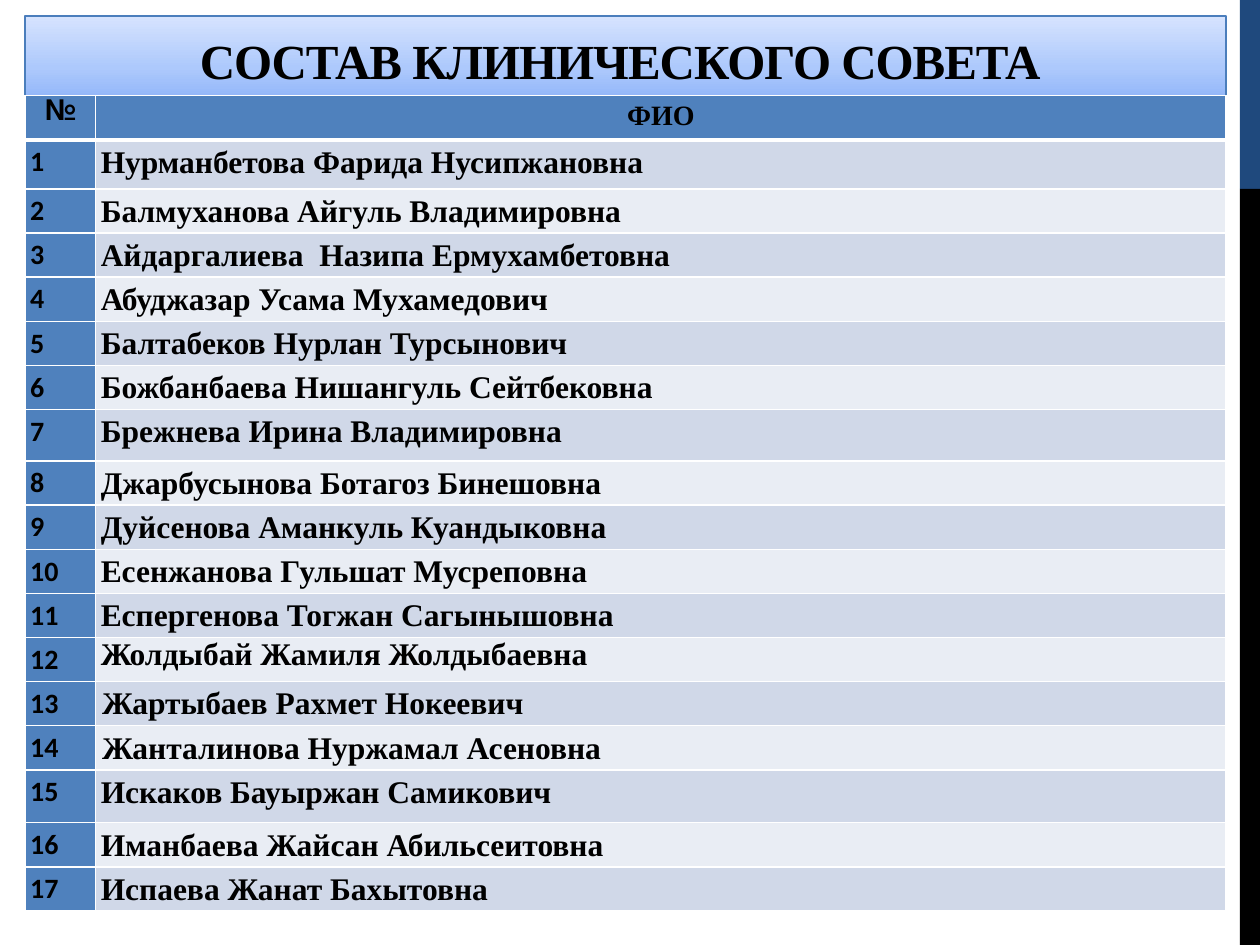
from copy import deepcopy

from lxml import etree
from pptx import Presentation
from pptx.dml.color import RGBColor
from pptx.enum.shapes import MSO_SHAPE
from pptx.enum.text import MSO_ANCHOR, PP_ALIGN
from pptx.oxml.ns import qn
from pptx.util import Inches, Pt

RECTANGLE = MSO_SHAPE.RECTANGLE
TOP, BOTTOM = MSO_ANCHOR.TOP, MSO_ANCHOR.BOTTOM
LEFT, CENTER = PP_ALIGN.LEFT, PP_ALIGN.CENTER

SERIF, SANS, HEADER_SANS = "Times New Roman", "Calibri", "TeX Gyre Adventor"
BLUE, NAVY, BLACK, WHITE = "4F81BD", "1F497D", "000000", "FFFFFF"
BANDS = ("D0D8E8", "E9EDF4")
TITLE_STOPS = ((0, "95B8F9"), (0.35, "ADC9FC"), (1, "D6E3FE"))

MEMBERS = (
    "Нурманбетова Фарида Нусипжановна",
    "Балмуханова Айгуль Владимировна",
    "Айдаргалиева  Назипа Ермухамбетовна",
    "Абуджазар Усама Мухамедович",
    "Балтабеков Нурлан Турсынович",
    "Божбанбаева Нишангуль Сейтбековна",
    "Брежнева Ирина Владимировна",
    "Джарбусынова Ботагоз Бинешовна",
    "Дуйсенова Аманкуль Куандыковна",
    "Есенжанова Гульшат Мусреповна",
    "Еспергенова Тогжан Сагынышовна",
    "Жолдыбай Жамиля Жолдыбаевна",
    "Жартыбаев Рахмет Нокеевич",
    "Жанталинова Нуржамал Асеновна",
    "Искаков Бауыржан Самикович",
    "Иманбаева Жайсан Абильсеитовна",
    "Испаева Жанат Бахытовна",
)
ROW_HEIGHT = 0.35
TALL_ROWS = {1: 0.39, 7: 0.41, 15: 0.42}
SINGLE_SPACED_ROWS = (12,)
INDENTED_ROWS = (13, 14)


def color(value):
    """Return the colour for a hex string."""
    return RGBColor.from_string(value)


def write_text(frame, text, font=SERIF, size=16, align=LEFT, line_spacing=1.0, spacing=None):
    """Write one bold black paragraph into a text frame."""
    paragraph = frame.paragraphs[0]
    paragraph.alignment = align
    paragraph.line_spacing = line_spacing
    run = paragraph.add_run()
    run.text = text
    run.font.name = font
    run.font.size = Pt(size)
    run.font.bold = True
    run.font.color.rgb = color(BLACK)
    if spacing is not None:
        run.font._element.set("spc", str(round(spacing * 100)))


def add_rectangle(slide, left, top, width, height):
    """Add a rectangle without shadow or line."""
    shape = slide.shapes.add_shape(
        RECTANGLE, Inches(left), Inches(top), Inches(width), Inches(height))
    shape.shadow.inherit = False
    shape.line.fill.background()
    return shape


def add_sidebar(slide, left, top, width, height):
    """Add the two-coloured strip, one fifth of it navy."""
    split = height / 5
    for offset, length, fill in ((0, split, NAVY), (split, height - split, BLACK)):
        band = add_rectangle(slide, left, top + offset, width, length)
        band.fill.solid()
        band.fill.fore_color.rgb = color(fill)


def add_title(slide, left, top, width, height):
    """Add the gradient title bar."""
    bar = add_rectangle(slide, left, top, width, height)
    bar.fill.gradient()
    bar.fill.gradient_angle = 90
    stop_list = next(bar._element.iter(qn("a:gsLst")))
    stop_list.append(deepcopy(stop_list[0]))
    for stop, (position, value) in zip(bar.fill.gradient_stops, TITLE_STOPS):
        stop.position = position
        stop.color.rgb = color(value)
    bar.line.color.rgb = color("4B7EBC")
    bar.line.width = Pt(1)
    frame = bar.text_frame
    frame.word_wrap = True
    frame.vertical_anchor = BOTTOM
    write_text(frame, "СОСТАВ КЛИНИЧЕСКОГО СОВЕТА ", size=28, align=CENTER, spacing=-0.6)


def set_borders(cell, top_width, bottom_width):
    """Draw white borders around a cell."""
    properties = cell._tc.get_or_add_tcPr()
    for side, width in (("L", 1), ("R", 1), ("T", top_width), ("B", bottom_width)):
        line = etree.SubElement(properties, qn(f"a:ln{side}"), w=str(Pt(width)))
        fill = etree.SubElement(line, qn("a:solidFill"))
        etree.SubElement(fill, qn("a:srgbClr"), val=WHITE)


def fill_cell(cell, text, fill, row, margin=0.04, **text_format):
    """Format one table cell and write its text."""
    set_borders(cell, 3 if row == 1 else 1, 3 if row == 0 else 1)
    cell.fill.solid()
    cell.fill.fore_color.rgb = color(fill)
    cell.margin_left = cell.margin_right = Inches(margin)
    cell.margin_top = cell.margin_bottom = 0
    cell.vertical_anchor = TOP
    write_text(cell.text_frame, text, **{"line_spacing": 1.15, **text_format})


def add_members_table(slide, left, top, width, number_width):
    """Add the numbered table of council members."""
    heights = [TALL_ROWS.get(row, ROW_HEIGHT) for row in range(len(MEMBERS) + 1)]
    table = slide.shapes.add_table(
        len(heights), 2, Inches(left), Inches(top), Inches(width), Inches(sum(heights))).table
    table.columns[0].width = Inches(number_width)
    table.columns[1].width = Inches(width - number_width)
    for table_row, height in zip(table.rows, heights):
        table_row.height = Inches(height)
    fill_cell(table.cell(0, 0), "№", BLUE, 0, font=HEADER_SANS, align=CENTER)
    fill_cell(table.cell(0, 1), "ФИО", BLUE, 0, align=CENTER)
    for row, member in enumerate(MEMBERS, start=1):
        fill_cell(table.cell(row, 0), str(row), BLUE, row, font=SANS)
        fill_cell(
            table.cell(row, 1), member, BANDS[(row - 1) % 2], row, size=18,
            margin=0.05 if row in INDENTED_ROWS else 0.04,
            line_spacing=1.0 if row in SINGLE_SPACED_ROWS else 1.15)


def main():
    """Build and save the slide."""
    presentation = Presentation()
    presentation.slide_width = Inches(10)
    presentation.slide_height = Inches(7.5)
    slide = presentation.slides.add_slide(presentation.slide_layouts[6])
    add_sidebar(slide, 9.84, 0, 0.16, 7.5)
    add_title(slide, 0.2, 0.13, 9.53, 0.63)
    add_members_table(slide, 0.2, 0.76, 9.53, 0.56)
    presentation.save("out.pptx")


if __name__ == "__main__":
    main()
